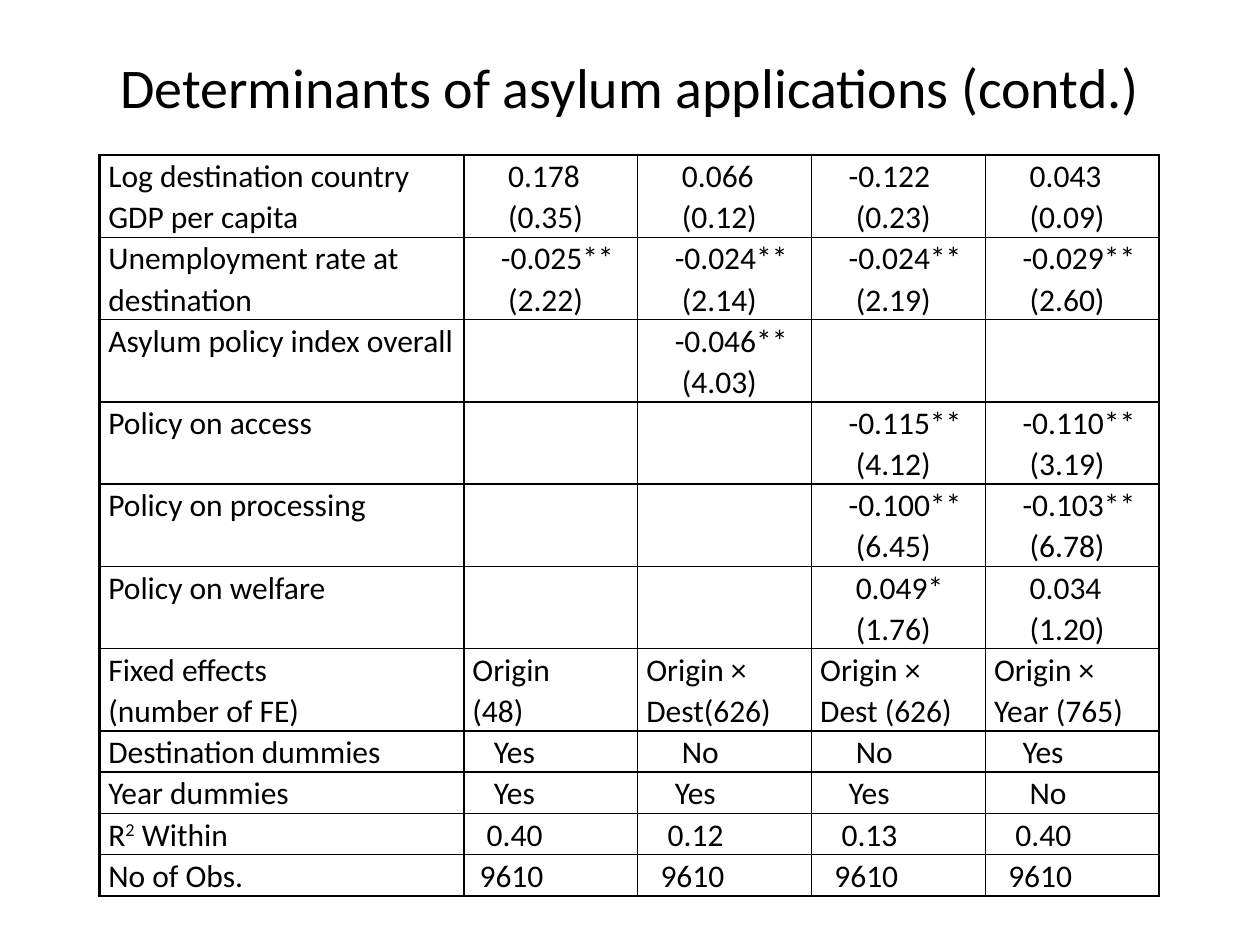
from dataclasses import dataclass

from lxml.etree import SubElement
from pptx import Presentation
from pptx.dml.color import RGBColor
from pptx.enum.text import MSO_ANCHOR as Anchor, PP_ALIGN as Align
from pptx.oxml.ns import qn
from pptx.util import Inches, Pt

FONT = "Calibri"
COLORS = {"ink": "000000"}
BODY_SIZE = 18
LINE_SPACING = 1.07
INDENT_STEP = 0.0565  # inches, one space of the body font
THICK, THIN = 1.5, 1
COLUMN_WIDTHS = (2.89,) + (1.38,) * 4
LINE_HEIGHT = {1: 0.31, 2: 0.63}


@dataclass(frozen=True)
class Line:
    text: str
    indent: int = 0
    superscript: str = ""
    tail: str = ""


@dataclass(frozen=True)
class Row:
    label: tuple[Line, ...]
    cells: tuple[tuple[Line, ...], ...]
    lines: int = 2


def estimate(value: str) -> tuple[Line, ...]:
    """Split 'coefficient (t-ratio)' into two lines, hanging the minus sign."""
    return tuple(Line(part, 4 if part.startswith("-") else 5) for part in value.split())


def estimate_row(label: str, *values: str) -> Row:
    return Row((Line(label),), tuple(estimate(value) for value in values))


def summary_row(label: Line, values: tuple[str, ...], indents: tuple[int, ...]) -> Row:
    cells = tuple((Line(value, indent),) for value, indent in zip(values, indents))
    return Row((label,), cells, lines=1)


ROWS = (
    estimate_row("Log destination country GDP per capita",
                 "0.178 (0.35)", "0.066 (0.12)", "-0.122 (0.23)", "0.043 (0.09)"),
    estimate_row("Unemployment rate at destination",
                 "-0.025** (2.22)", "-0.024** (2.14)", "-0.024** (2.19)", "-0.029** (2.60)"),
    estimate_row("Asylum policy index overall", "", "-0.046** (4.03)", "", ""),
    estimate_row("Policy on access", "", "", "-0.115** (4.12)", "-0.110** (3.19)"),
    estimate_row("Policy on processing", "", "", "-0.100** (6.45)", "-0.103** (6.78)"),
    estimate_row("Policy on welfare", "", "", "0.049* (1.76)", "0.034 (1.20)"),
    Row((Line("Fixed effects"), Line("(number of FE)")),
        ((Line("Origin"), Line("(48)")),
         (Line("Origin × Dest(626)"),),
         (Line("Origin × Dest (626)"),),
         (Line("Origin × Year (765)"),))),
    summary_row(Line("Destination dummies"), ("Yes", "No", "No", "Yes"), (3, 5, 5, 4)),
    summary_row(Line("Year dummies"), ("Yes", "Yes", "Yes", "No"), (3, 4, 4, 5)),
    summary_row(Line("R", superscript="2", tail=" Within"),
                ("0.40", "0.12", "0.13", "0.40"), (2, 3, 3, 3)),
    summary_row(Line("No of Obs."), ("9610",) * 4, (1, 2, 2, 2)),
)


def add_run(paragraph, text: str, size: float, baseline: int = 0) -> None:
    run = paragraph.add_run()
    run.text = text
    run.font.name = FONT
    run.font.size = Pt(size)
    run.font.color.rgb = RGBColor.from_string(COLORS["ink"])
    if baseline:
        run.font._element.set("baseline", str(baseline * 1000))


def write_lines(cell, lines: tuple[Line, ...]) -> None:
    frame = cell.text_frame
    for index, line in enumerate(lines):
        paragraph = frame.add_paragraph() if index else frame.paragraphs[0]
        paragraph.line_spacing = LINE_SPACING
        if line.indent:
            properties = paragraph._p.get_or_add_pPr()
            properties.set("marL", str(Inches(line.indent * INDENT_STEP)))
            properties.set("indent", "0")
        add_run(paragraph, line.text, BODY_SIZE)
        if line.superscript:
            add_run(paragraph, line.superscript, BODY_SIZE, baseline=30)
            add_run(paragraph, line.tail, BODY_SIZE)


def set_borders(cell, widths: dict[str, float]) -> None:
    properties = cell._tc.get_or_add_tcPr()
    for side, width in widths.items():
        border = SubElement(properties, qn(f"a:ln{side}"), w=str(Pt(width)))
        fill = SubElement(border, qn("a:solidFill"))
        SubElement(fill, qn("a:srgbClr"), val=COLORS["ink"])


def format_cell(cell, row: int, column: int) -> None:
    last_row, last_column = len(ROWS) - 1, len(COLUMN_WIDTHS) - 1
    set_borders(cell, {
        "L": THICK if column <= 1 else THIN,
        "R": THICK if column in (0, last_column) else THIN,
        "T": THICK if row == 0 else THIN,
        "B": THICK if row == last_row else THIN,
    })
    cell.fill.background()
    cell.margin_left = cell.margin_right = Inches(0.07)
    cell.margin_top = cell.margin_bottom = 0
    cell.vertical_anchor = Anchor.TOP


def add_title(slide, text: str) -> None:
    title = slide.shapes.title
    title.left, title.top = Inches(0.5), Inches(0.3)
    title.width, title.height = Inches(9), Inches(0.77)
    title.text_frame.vertical_anchor = Anchor.MIDDLE
    paragraph = title.text_frame.paragraphs[0]
    paragraph.alignment = Align.CENTER
    add_run(paragraph, text, 32)


def add_regression_table(slide) -> None:
    heights = [LINE_HEIGHT[row.lines] for row in ROWS]
    table = slide.shapes.add_table(
        len(ROWS), len(COLUMN_WIDTHS), Inches(0.79), Inches(1.23),
        Inches(sum(COLUMN_WIDTHS)), Inches(sum(heights))).table
    table.first_row = table.horz_banding = False
    for column, width in zip(table.columns, COLUMN_WIDTHS):
        column.width = Inches(width)
    for row_index, (row, height) in enumerate(zip(ROWS, heights)):
        table.rows[row_index].height = Inches(height)
        for column_index, lines in enumerate((row.label, *row.cells)):
            cell = table.cell(row_index, column_index)
            format_cell(cell, row_index, column_index)
            write_lines(cell, lines)


def main() -> None:
    presentation = Presentation()
    presentation.slide_width, presentation.slide_height = Inches(10), Inches(7.5)
    slide = presentation.slides.add_slide(presentation.slide_layouts[5])
    add_title(slide, "Determinants of asylum applications (contd.)")
    add_regression_table(slide)
    presentation.save("out.pptx")


if __name__ == "__main__":
    main()
